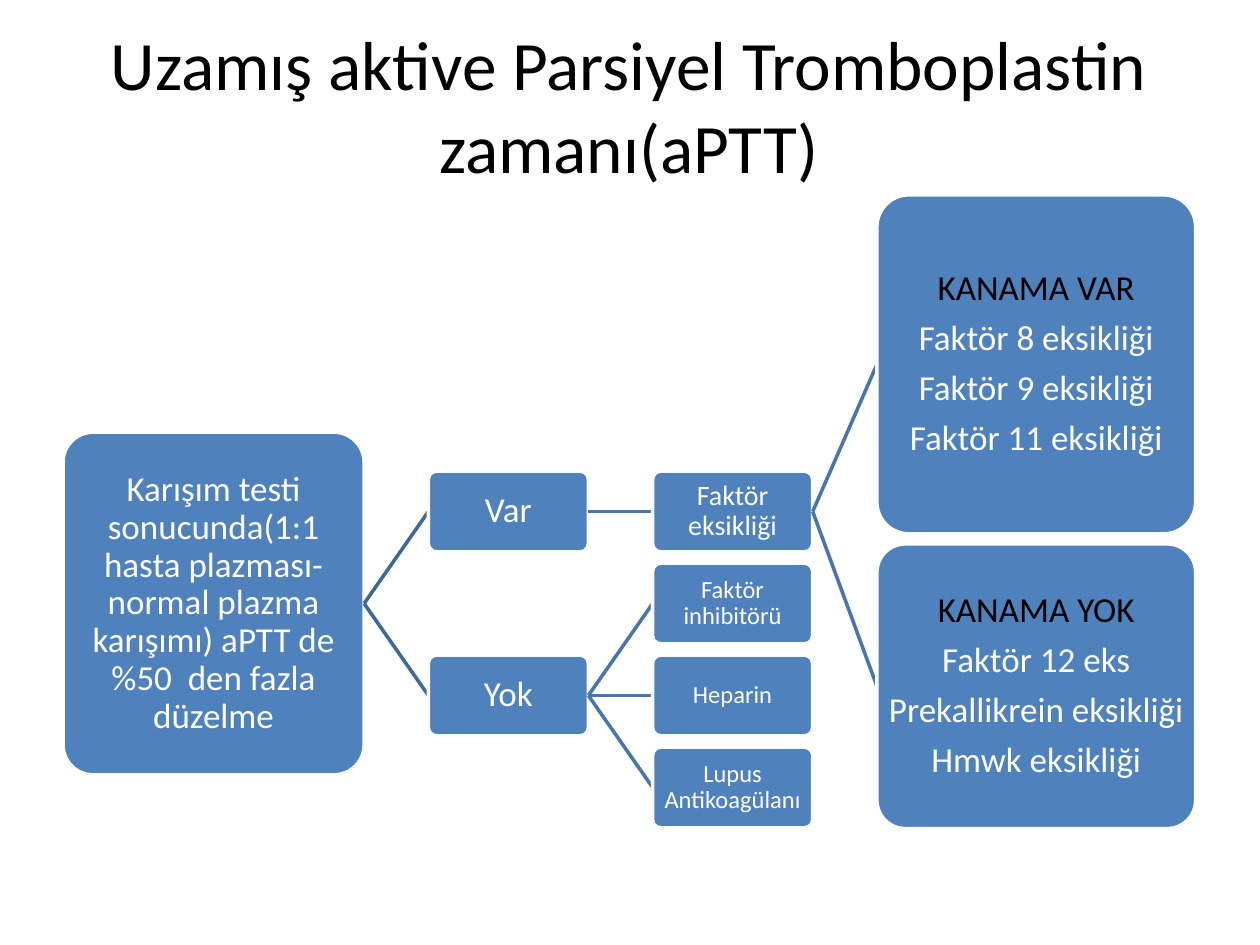
import pptx
import pptx.util
import pptx.dml.color
import pptx.enum.shapes
import pptx.enum.text
import pptx.oxml.ns
import lxml.etree
import itertools

Inches, Pt = pptx.util.Inches, pptx.util.Pt
COLOURS = {"box": "4F81BD", "edge": "FFFFFF", "text": "FFFFFF",
           "head": "000000", "stem": "3F6797", "twig": "4875AC"}
WIDTHS = [2.39, 1.27, 1.27, 2.53]
GAP = 0.51
LEFTS = [0.5 + s + i * GAP
         for i, s in enumerate(itertools.accumulate(WIDTHS[:-1], initial=0))]
TOP, PITCH = 4.06, 0.73  # centre of row 0, step between rows


def rgb(key):
    return pptx.dml.color.RGBColor.from_string(COLOURS[key])


class Chart:
    """Tree of boxes; a column gives left and width, a row the centre."""

    def __init__(self, slide, font="Calibri"):
        self.slide, self.font = slide, font

    def label(self, frame, lines, size, inset, colours, spacing=1.0, after=0):
        frame.word_wrap = True
        frame.vertical_anchor = pptx.enum.text.MSO_ANCHOR.MIDDLE
        frame.margin_left = frame.margin_right = Inches(inset)
        frame.margin_top = frame.margin_bottom = Inches(inset / 2)
        for i, (line, colour) in enumerate(zip(lines, colours)):
            para = frame.add_paragraph() if i else frame.paragraphs[0]
            para.text = line
            para.alignment = pptx.enum.text.PP_ALIGN.CENTER
            para.line_spacing = spacing
            para.space_after = Pt(after)
            for run in para.runs:
                run.font.name, run.font.size = self.font, Pt(size)
                run.font.color.rgb = rgb(colour)

    def title(self, text):
        box = self.slide.shapes.add_textbox(
            Inches(0.48), Inches(0.11), Inches(9.02), Inches(1.44))
        self.label(box.text_frame, [text], 39.6, 0.1, ["head"])

    def link(self, colour):
        line = self.slide.shapes.add_connector(
            pptx.enum.shapes.MSO_CONNECTOR.STRAIGHT, 0, 0, 0, 0)
        line.line.color.rgb = rgb(colour)
        line.line.width = Pt(2)
        lxml.etree.SubElement(line._element.spPr,
                              pptx.oxml.ns.qn("a:effectLst"))
        return line

    def box(self, col, row, lines, size=20, high=0.64, parent=None):
        """Add a box, in front of the line that joins it to its parent."""
        line = self.link("stem" if col == 1 else "twig") if parent else None
        shape = self.slide.shapes.add_shape(
            pptx.enum.shapes.MSO_SHAPE.ROUNDED_RECTANGLE,
            Inches(LEFTS[col]), Inches(TOP + row * PITCH - high / 2),
            Inches(WIDTHS[col]), Inches(high))
        shape.adjustments[0] = 0.1
        shape.shadow.inherit = False
        shape.fill.solid()
        shape.fill.fore_color.rgb = rgb("box")
        shape.line.color.rgb = rgb("edge")
        shape.line.width = Pt(2)
        first = "head" if len(lines) > 1 else "text"
        self.label(shape.text_frame, lines, size, 0.01,
                   [first] + ["text"] * (len(lines) - 1), 0.9, size * 0.35)
        if line:
            line.begin_connect(parent, 3)
            line.end_connect(shape, 1)
        return shape


def main():
    deck = pptx.Presentation()
    deck.slide_width, deck.slide_height = Inches(10), Inches(7.5)
    chart = Chart(deck.slides.add_slide(deck.slide_layouts[6]))
    chart.title("Uzamış aktive Parsiyel Tromboplastin\nzamanı(aPTT)")

    root = chart.box(0, 1, ["Karışım testi sonucunda(1:1 hasta plazması-normal "
                            "plazma karışımı) aPTT de %50  den fazla düzelme"],
                     high=2.72)
    yes = chart.box(1, 0, ["Var"], parent=root)
    lack = chart.box(2, 0, ["Faktör eksikliği"], 16, parent=yes)
    chart.box(3, -1.6, ["KANAMA VAR", "Faktör 8 eksikliği",
                        "Faktör 9 eksikliği", "Faktör 11 eksikliği"],
              high=2.69, parent=lack)
    chart.box(3, 1.9, ["KANAMA YOK", "Faktör 12 eks",
                       "Prekallikrein eksikliği", "Hmwk eksikliği"],
              high=2.26, parent=lack)
    no = chart.box(1, 2, ["Yok"], parent=root)
    causes = ["Faktör inhibitörü", "Heparin", "Lupus Antikoagülanı"]
    for row, cause in enumerate(causes, 1):
        chart.box(2, row, [cause], 14, parent=no)
    deck.save("out.pptx")


if __name__ == "__main__":
    main()
